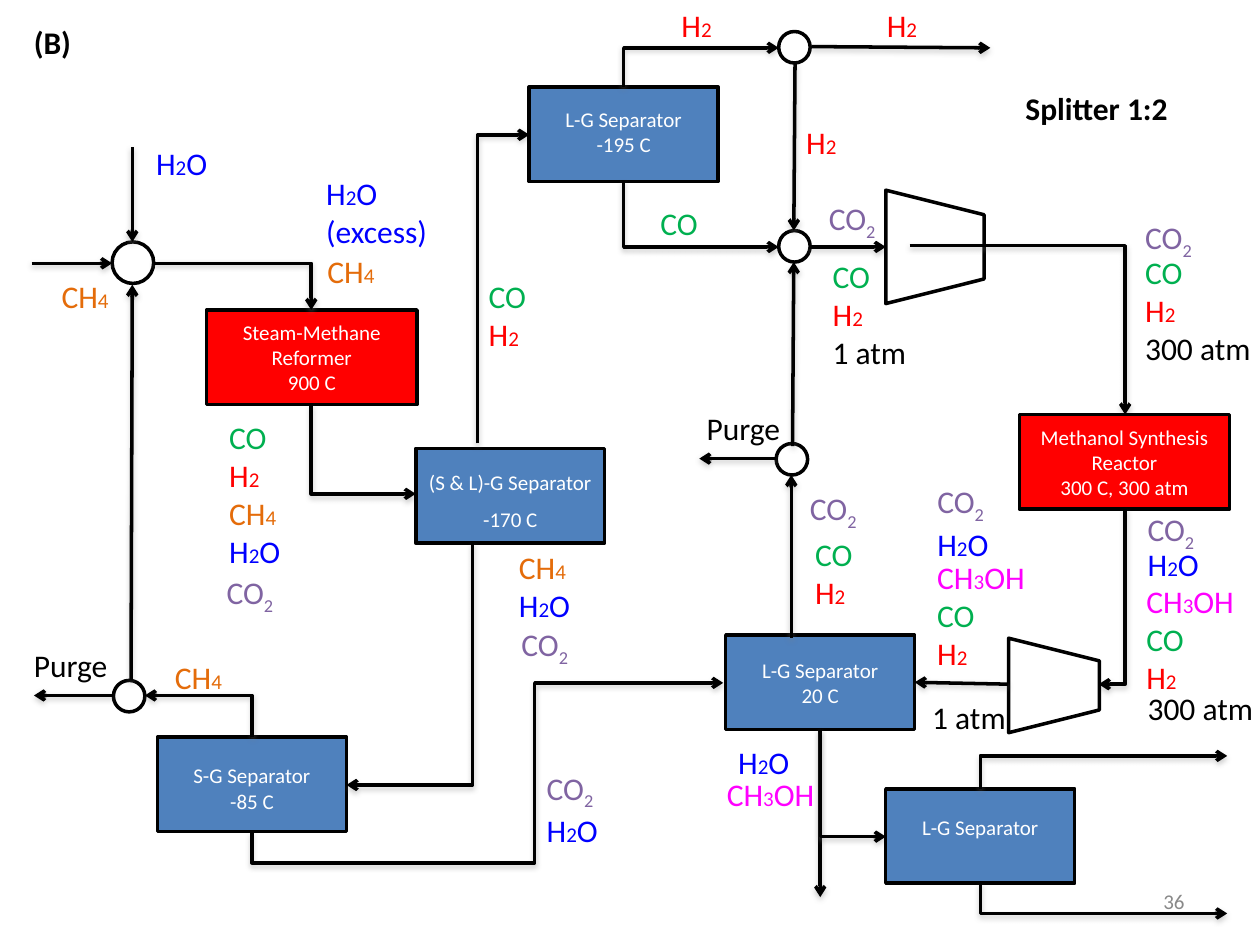
from dataclasses import dataclass
from itertools import groupby
from math import copysign

from lxml.etree import SubElement
from pptx import Presentation
from pptx.dml.color import RGBColor
from pptx.enum.shapes import MSO_CONNECTOR as LINK, MSO_SHAPE as SHAPE
from pptx.enum.text import MSO_ANCHOR as ANCHOR, MSO_AUTO_SIZE as AUTOSIZE, PP_ALIGN as ALIGN
from pptx.oxml.ns import qn
from pptx.util import Inches, Pt


@dataclass(frozen=True)
class Theme:
    """Colours, font and sizes of the flowsheet."""
    font: str = "Calibri"
    label: int = 18
    small: int = 12
    stroke: float = 2
    ink: str = "000000"
    paper: str = "FFFFFF"
    reactor: str = "FF0000"
    separator: str = "4F81BD"
    muted: str = "898989"
    shadow: str = "808080"


@dataclass(frozen=True)
class Area:
    """A region of the slide with its own top left corner."""
    slide: object
    left: float
    top: float

    def point(self, x, y):
        """Turn a point of the region into slide lengths."""
        return Inches(self.left + x), Inches(self.top + y)


THEME = Theme()
SPECIES = {"H2O": "0000FF", "CH4": "E46C0A", "CO": "00B050", "H2": "FF0000",
           "CO2": "8064A2", "CH3OH": "FF00FF"}
UNIT = (1.5, 0.75)
REACTOR = (1.67, 0.75)
NODE = 0.25


def write(frame, lines, size=THEME.label, color=THEME.ink, bold=False, align=ALIGN.LEFT, gap=0):
    """Write lines, giving each chemical formula its colour and small digits."""
    frame.word_wrap = True
    for number, line in enumerate(lines):
        paragraph = frame.paragraphs[0] if number == 0 else frame.add_paragraph()
        paragraph.alignment = align
        paragraph.space_before = Pt(gap if number else 0)
        formula = line.split()[0]
        known = formula in SPECIES
        parts = groupby(line, str.isdigit) if known else [(False, line)]
        for is_digit, letters in parts:
            run = paragraph.add_run()
            run.text = "".join(letters)
            font = run.font
            font.name, font.bold = THEME.font, bold
            font.color.rgb = RGBColor.from_string(SPECIES.get(formula, color))
            lowered = is_digit and formula == "CO2"
            font.size = Pt(THEME.small if is_digit and not lowered else size)
            if lowered:
                font._element.set("baseline", "-25000")


def label(area, x, y, width, *lines, height=0.4, **style):
    """Place a text box that grows with its lines."""
    box = area.slide.shapes.add_textbox(*area.point(x, y), Inches(width), Inches(height))
    write(box.text_frame, lines, **style)
    box.text_frame.auto_size = AUTOSIZE.SHAPE_TO_FIT_TEXT


def outline(area, kind, x, y, width, height, fill=THEME.paper):
    """Place a filled shape with the common outline."""
    shape = area.slide.shapes.add_shape(kind, *area.point(x, y), Inches(width), Inches(height))
    shape.shadow.inherit = False
    shape.fill.solid()
    shape.fill.fore_color.rgb = RGBColor.from_string(fill)
    shape.line.color.rgb = RGBColor.from_string(THEME.ink)
    shape.line.width = Pt(THEME.stroke)
    return shape


def unit(area, x, y, *lines, size=UNIT, fill=THEME.separator, shift=0, gap=0):
    """Place a process unit with centred text, moved down by shift."""
    block = outline(area, SHAPE.RECTANGLE, x, y, *size, fill=fill)
    frame = block.text_frame
    frame.margin_left = frame.margin_right = Inches(0.05)
    frame.margin_top, frame.margin_bottom = Inches(0.05 + shift), Inches(0.05 - shift)
    frame.vertical_anchor = ANCHOR.MIDDLE
    write(frame, lines, THEME.small, THEME.paper, align=ALIGN.CENTER, gap=gap)
    return block


def node(area, x, y, size=NODE):
    """Place a mixing or splitting point."""
    outline(area, SHAPE.OVAL, x, y, size, size)


def compressor(area, x, y, width, height):
    """Place a trapezoid that narrows to the right."""
    outline(area, SHAPE.TRAPEZOID, x, y, width, height).rotation = 90


def arrow(area, start, end, kind=LINK.STRAIGHT):
    """Draw a stream with an open arrowhead and a soft shadow."""
    stream = area.slide.shapes.add_connector(kind, *area.point(*start), *area.point(*end))
    stream.line.color.rgb = RGBColor.from_string(THEME.ink)
    stream.line.width = Pt(THEME.stroke)
    properties = stream._element.spPr
    SubElement(properties.find(qn("a:ln")), qn("a:tailEnd"), type="arrow")
    shadow = SubElement(SubElement(properties, qn("a:effectLst")), qn("a:outerShdw"),
                        blurRad=str(Pt(3.1)), dist=str(Pt(1.6)), dir="5400000", rotWithShape="0")
    tint = SubElement(shadow, qn("a:srgbClr"), val=THEME.shadow)
    SubElement(tint, qn("a:alpha"), val="38000")
    return stream


def elbow(area, start, end, preset="bentConnector2", adjust=()):
    """Draw a stream that leaves sideways and then turns up or down."""
    stream = arrow(area, start, end, LINK.ELBOW)
    geometry = stream._element.spPr.find(qn("a:prstGeom"))
    geometry.set("prst", preset)
    guides = geometry.find(qn("a:avLst"))
    for number, value in enumerate(adjust, 1):
        SubElement(guides, qn("a:gd"), name=f"adj{number}", fmla=f"val {round(value * 100000)}")
    return stream


def riser(area, start, end, **shape):
    """Draw a stream that leaves up or down and then turns sideways."""
    (x1, y1), (x2, y2) = start, end
    dx, dy = x2 - x1, y2 - y1
    middle_x, middle_y = (x1 + x2) / 2, (y1 + y2) / 2
    half_x, half_y = copysign(dy / 2, dx), copysign(dx / 2, -dy)
    stream = elbow(area, (middle_x + half_x, middle_y + half_y),
                   (middle_x - half_x, middle_y - half_y), **shape)
    degrees = 270 if dx * dy > 0 else 90
    stream._element.spPr.find(qn("a:xfrm")).set("rot", str(degrees * 60000))


def reforming(area):
    """Feed mixing and the steam reformer."""
    node(area, 0.89, 0.92, 0.33)
    arrow(area, (1.05, 0.17), (1.05, 0.92))
    arrow(area, (0.25, 1.09), (0.89, 1.09))
    label(area, 1.14, 0.09, 0.83, "H2O")
    label(area, 0.39, 1.15, 0.83, "CH4")
    unit(area, 1.64, 1.46, "Steam-Methane Reformer", "900 C", size=REACTOR, fill=THEME.reactor)
    elbow(area, (1.22, 1.09), (2.47, 1.46))
    label(area, 2.49, 0.33, 1.02, "H2O (excess)", height=0.71)
    label(area, 2.5, 0.95, 0.79, "CH4")
    riser(area, (2.47, 2.21), (3.3, 2.92))
    label(area, 1.72, 2.27, 0.75, "CO", "H2", "CH4", "H2O", height=1.31)
    label(area, 1.7, 3.5, 0.75, "CO2")


def methane_recycle(area):
    """Methane separation, its purge and its return to the feed."""
    node(area, 0.9, 0.4)
    arrow(area, (1.04, 0.4), (1.05, -2.74))
    arrow(area, (0.9, 0.52), (0.27, 0.52))
    label(area, 0.17, 0.08, 1.13, "Purge")
    unit(area, 1.25, 0.85, "S-G Separator", "-85 C", shift=0.03)
    riser(area, (2, 0.85), (1.15, 0.52))
    label(area, 1.29, 0.17, 0.83, "CH4")
    riser(area, (2, 1.6), (5.74, 0.42), preset="bentConnector4", adjust=(-0.21, 0.6))
    label(area, 4.24, 1.05, 0.75, "CO2", "H2O", height=0.71)


def gas_separation(area):
    """The two cold separators for carbon monoxide and hydrogen."""
    unit(area, 0.3, 3.56, "(S & L)-G Separator", "-170 C", shift=0.04, gap=7)
    riser(area, (0.79, 3.52), (1.2, 1.07))
    label(area, 0.78, 2.15, 0.92, "CO", "H2", height=0.71)
    riser(area, (0.75, 4.31), (-0.25, 6.23))
    label(area, 1.02, 4.3, 0.75, "CH4", "H2O", height=0.71)
    label(area, 1.04, 4.91, 0.75, "CO2")
    unit(area, 1.2, 0.69, "L-G Separator", "-195 C", shift=-0.02)
    riser(area, (1.95, 0.69), (3.18, 0.38))
    riser(area, (1.95, 1.44), (3.18, 1.96))
    label(area, 1.93, 1.57, 0.92, "CO", align=ALIGN.CENTER)
    label(area, 2.31, 0, 0.5, "H2")


def compression(area):
    """The hydrogen splitter, the mixing point and the compressor."""
    for top in (0.25, 1.83):
        node(area, 0.18, top)
    arrow(area, (0.44, 0.37), (1.86, 0.38))
    arrow(area, (0.31, 0.5), (0.3, 1.83))
    arrow(area, (0.42, 1.96), (1.03, 1.96))
    label(area, 0.94, 0, 0.5, "H2")
    label(area, 0.3, 0.93, 0.5, "H2")
    label(area, 2.04, 0.66, 1.72, "Splitter 1:2", bold=True)
    compressor(area, 0.97, 1.57, 0.9, 0.78)
    label(area, 0.48, 1.53, 0.75, "CO2")
    label(area, 0.51, 1.99, 0.92, "CO", "H2", "1 atm", height=1.01)
    elbow(area, (1.22, 1.95), (2.93, 3.29))
    label(area, 2.99, 1.68, 0.75, "CO2")
    label(area, 2.99, 1.96, 1.1, "CO", "H2", "300 atm", height=1.01)


def synthesis(area):
    """The methanol reactor and the expansion of its product."""
    unit(area, 1.09, 0.29, "Methanol Synthesis Reactor", "300 C, 300 atm",
         size=REACTOR, fill=THEME.reactor)
    riser(area, (1.93, 1.04), (1.72, 2.43))
    compressor(area, 0.99, 2.08, 0.75, 0.72)
    label(area, 2.01, 1, 0.75, "CO2")
    label(area, 2.01, 1.28, 0.75, "H2O")
    label(area, 0.34, 0.78, 0.75, "CO2", "H2O", height=0.71)
    for left, top in ((2, 1.57), (0.34, 1.38)):
        label(area, left, top, 1, "CH3OH", "CO", "H2", height=1.01)
    label(area, 2.01, 2.42, 1.13, "300 atm")
    label(area, 0.3, 2.49, 1.13, "1 atm")


def synthesis_recycle(area):
    """The condensing separator and the purged gas return."""
    separator = unit(area, 0.76, 2.04, "L-G Separator", "20 C")
    arrow(area, (3, 2.43), (2.26, 2.42)).end_connect(separator, 3)
    arrow(area, (1.51, 2.79), (1.51, 4.12)).begin_connect(separator, 2)
    node(area, 1.16, 0.52)
    arrow(area, (1.28, 2.06), (1.28, 0.77))
    arrow(area, (1.29, 0.54), (1.3, -0.92))
    arrow(area, (1.16, 0.64), (0.55, 0.64))
    label(area, 0.51, 0.2, 1.13, "Purge")
    label(area, 1.33, 0.83, 0.75, "CO2")
    label(area, 1.37, 1.2, 0.58, "CO", "H2", height=0.7)


def purification(area):
    """The last separator with its two outlets."""
    riser(area, (1.51, 0.79), (2.03, 1.64))
    label(area, 0.76, 0.85, 0.75, "H2O")
    label(area, 0.67, 1.1, 1.08, "CH3OH")
    unit(area, 2.03, 1.26, "L-G Separator", shift=-0.07)
    riser(area, (2.78, 1.26), (4.74, 1))
    riser(area, (2.78, 2.01), (4.74, 2.25))


def captions(area):
    """The part letter and the page number."""
    label(area, 0.17, 0.13, 0.58, "(B)", bold=True)
    label(area, 7.17, 7, 2.33, "36", height=0.3, size=THEME.small, color=THEME.muted,
          align=ALIGN.RIGHT)


def main():
    """Build the flowsheet slide."""
    deck = Presentation()
    deck.slide_width, deck.slide_height = Inches(10), Inches(7.5)
    slide = deck.slides.add_slide(deck.slide_layouts[6])
    regions = ((reforming, 0, 1), (methane_recycle, 0, 5), (gas_separation, 3, 0),
               (compression, 6, 0), (synthesis, 7, 3), (synthesis_recycle, 5, 3),
               (purification, 5, 5), (captions, 0, 0))
    for draw, left, top in regions:
        draw(Area(slide, left, top))
    deck.save("out.pptx")


if __name__ == "__main__":
    main()
